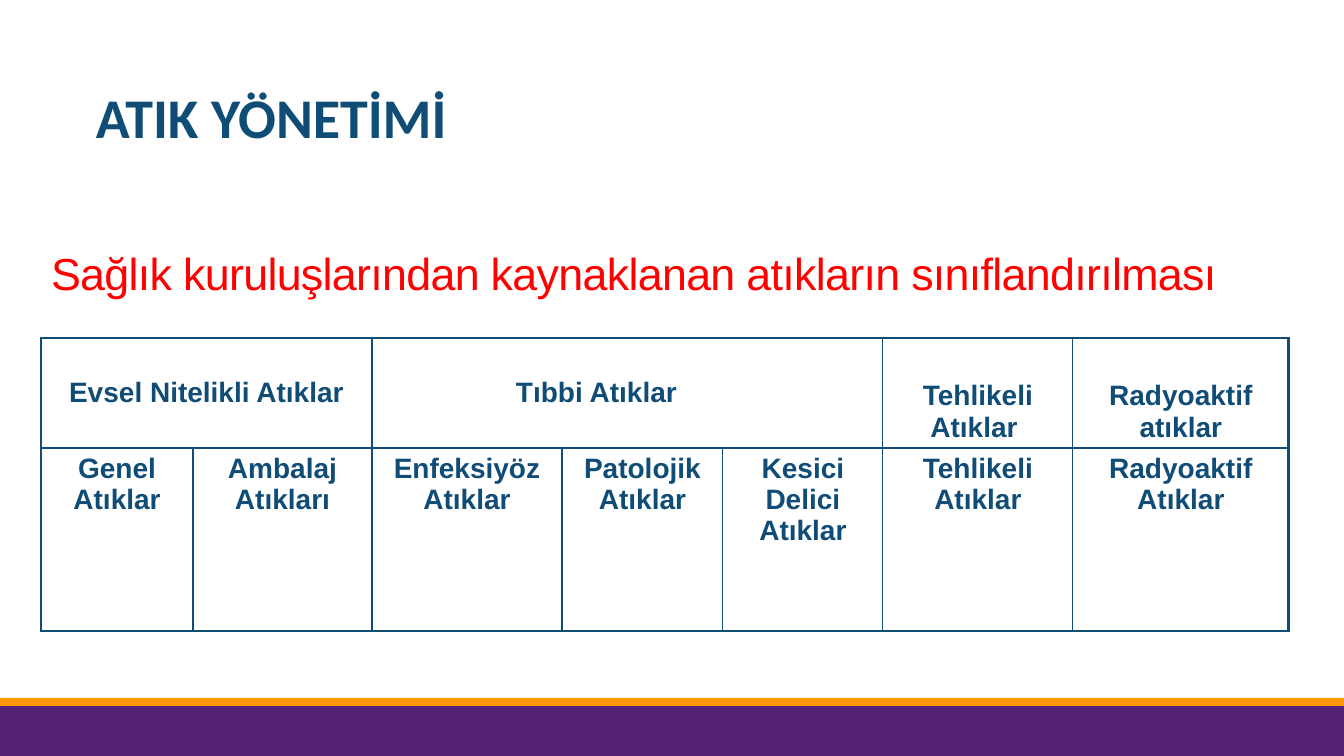
from pptx import Presentation
from pptx import util as u
from pptx.dml.color import RGBColor
from pptx.enum import shapes, text
from pptx.oxml import xmlchemy

PX = 914400 / 100.8
COLORS = {"navy": "0F4C76", "red": "FF0000", "purple": "542378", "orange": "FF9900"}
COLS = [152, 179, 190, 161, 160, 190, 216]
ROWS = [110, 183]
GROUPS = [
    (0, 2, "Evsel Nitelikli Atıklar", "MIDDLE", 10),
    (2, 3, "Tıbbi Atıklar", "MIDDLE", 72),
    (5, 1, "Tehlikeli Atıklar ", "BOTTOM", 10),
    (6, 1, "Radyoaktif atıklar", "BOTTOM", 10),
]
KINDS = [
    "Genel Atıklar", "Ambalaj Atıkları", "Enfeksiyöz Atıklar", "Patolojik Atıklar",
    "Kesici Delici Atıklar", "Tehlikeli Atıklar", "Radyoaktif Atıklar",
]


def px(n):
    return u.Emu(round(n * PX))


def color(name):
    return RGBColor.from_string(COLORS[name])


def write(tf, words, fill, **fmt):
    p = tf.paragraphs[0]
    r = p.add_run()
    r.text = words
    for key, value in fmt.items():
        setattr(r.font, key, value)
    r.font.color.rgb = color(fill)
    return p, r


def add_bar(s, top, height, fill):
    sp = s.shapes.add_shape(shapes.MSO_SHAPE.RECTANGLE, 0, px(top), px(1344), px(height))
    sp.shadow.inherit = False
    sp.fill.solid()
    sp.fill.fore_color.rgb = color(fill)
    sp.line.fill.background()


def set_title(s, words):
    sp = s.shapes.title
    box = {"left": 41, "top": 171, "width": 1248, "height": 134}
    for key, value in box.items():
        setattr(sp, key, px(value))
    tf = sp.text_frame
    tf.auto_size = text.MSO_AUTO_SIZE.NONE
    tf.vertical_anchor = text.MSO_ANCHOR.BOTTOM
    p, r = write(tf, words, "red", name="Arial", size=u.Pt(32), bold=False)
    p.alignment = text.PP_ALIGN.LEFT
    p.line_spacing = 0.85
    r.font._element.set("spc", "-50")


def add_heading(s, words):
    tf = s.shapes.add_textbox(px(86), px(78), px(446), px(78)).text_frame
    tf.word_wrap = True
    write(tf, words, "navy", name="Calibri", size=u.Pt(40), bold=True)


def set_borders(cell, outer):
    tc_pr = cell._tc.get_or_add_tcPr()
    for i, side in enumerate("LRTB"):
        ln = xmlchemy.OxmlElement(f"a:ln{side}")
        ln.set("w", str(u.Pt(2.25 if side in outer else 1)))
        solid = xmlchemy.OxmlElement("a:solidFill")
        clr = xmlchemy.OxmlElement("a:srgbClr")
        clr.set("val", COLORS["navy"])
        solid.append(clr)
        ln.append(solid)
        tc_pr.insert(i, ln)


def fill_cell(cell, words, anchor="TOP", right=10):
    cell.vertical_anchor = getattr(text.MSO_ANCHOR, anchor)
    cell.margin_right = px(right)
    p, _ = write(cell.text_frame, words, "navy", name="Arial", size=u.Pt(20), bold=True)
    p.alignment = text.PP_ALIGN.CENTER


def add_waste_table(s):
    frame = s.shapes.add_table(len(ROWS), len(COLS), px(41), px(338), px(sum(COLS)), px(sum(ROWS)))
    table = frame.table
    table.first_row = table.horz_banding = False
    for lines, attr, sizes in ((table.columns, "width", COLS), (table.rows, "height", ROWS)):
        for line, size in zip(lines, sizes):
            setattr(line, attr, px(size))
    for row in range(len(ROWS)):
        for col in range(len(COLS)):
            cell = table.cell(row, col)
            cell.fill.background()
            outer = "TB"[row] + {0: "L", len(COLS) - 1: "R"}.get(col, "")
            set_borders(cell, outer)
    for col, span, words, anchor, right in GROUPS:
        cell = table.cell(0, col)
        if span > 1:
            cell.merge(table.cell(0, col + span - 1))
        fill_cell(cell, words, anchor, right)
    for col, words in enumerate(KINDS):
        fill_cell(table.cell(1, col), words)


def main():
    prs = Presentation()
    prs.slide_width, prs.slide_height = px(1344), px(756)
    s = prs.slides.add_slide(prs.slide_layouts[5])
    add_bar(s, 706, 50, "purple")
    add_bar(s, 698, 8, "orange")
    set_title(s, "Sağlık kuruluşlarından kaynaklanan atıkların sınıflandırılması")
    add_waste_table(s)
    add_heading(s, "ATIK YÖNETİMİ")
    prs.save("out.pptx")


if __name__ == "__main__":
    main()
